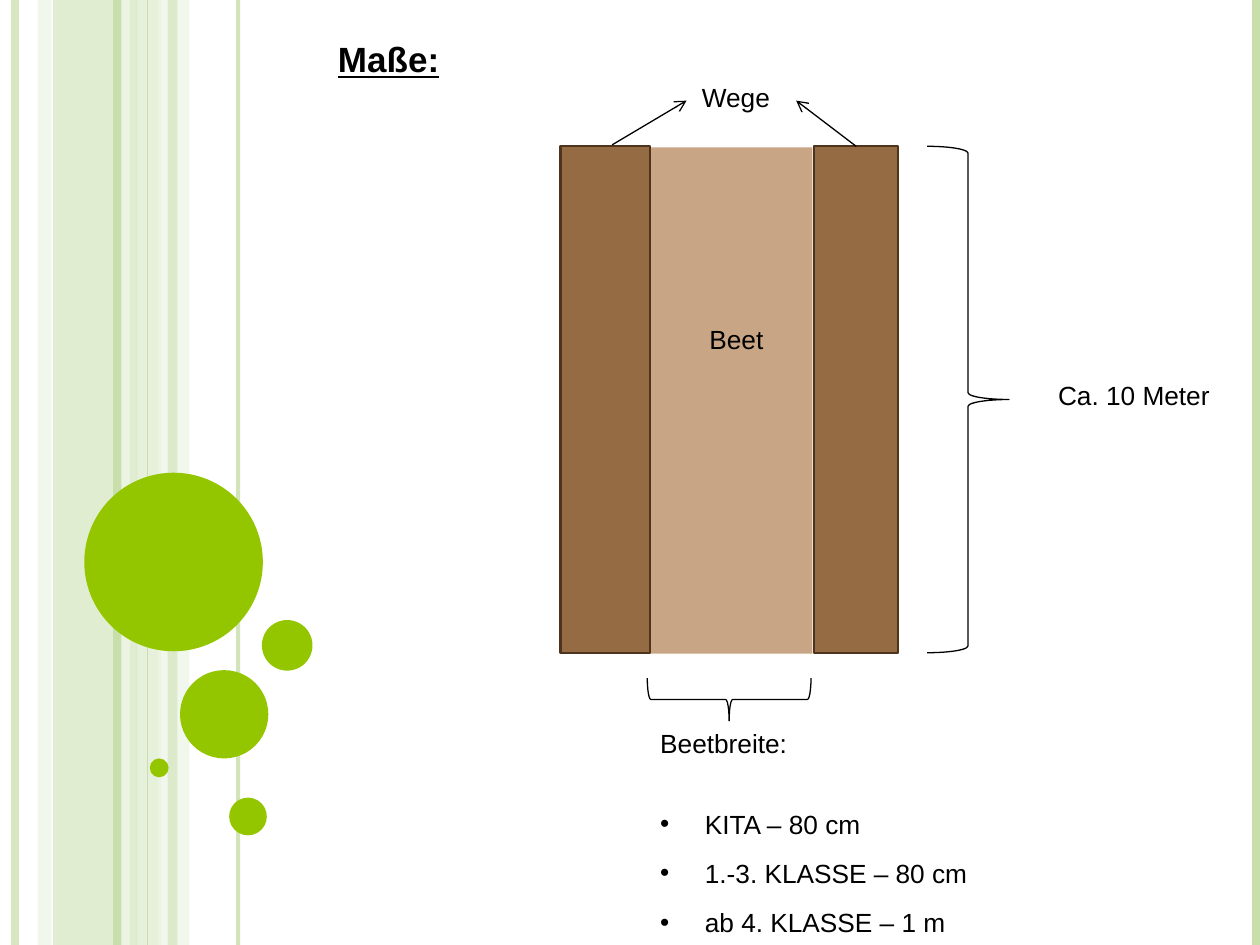
import dataclasses

import lxml.etree
import pptx
import pptx.dml.color
import pptx.enum.shapes
import pptx.enum.text
import pptx.oxml.ns
import pptx.util

Cm, Pt = pptx.util.Cm, pptx.util.Pt
Kind = pptx.enum.shapes.MSO_SHAPE
Align = pptx.enum.text.PP_ALIGN
qn = pptx.oxml.ns.qn


@dataclasses.dataclass
class Theme:
    font: str = "Arial"
    body: float = 15
    title: float = 20
    ink: str = "000000"
    band: str = "C8DFAB"
    mist: str = "DCEACC"
    pale: str = "EEF5E7"
    green: str = "94C600"
    bed: str = "C8A685"
    way: str = "956B43"
    edge: str = "4E341C"


def add(parent, tag, **attrs):
    return lxml.etree.SubElement(parent, qn(tag), **attrs)


class Sheet:
    def __init__(self, slide, theme):
        self.slide, self.theme = slide, theme

    def paint(self, fill, color, alpha=100):
        fill.solid()
        fill.fore_color.rgb = pptx.dml.color.RGBColor.from_string(color)
        if alpha < 100:
            node = fill.fore_color._xFill.find(qn("a:srgbClr"))
            add(node, "a:alpha", val=str(alpha * 1000))

    def shape(self, kind, x, y, w, h, fill=None, alpha=100, line=None, width=0.75):
        item = self.slide.shapes.add_shape(kind, Cm(x), Cm(y), Cm(w), Cm(h))
        item.shadow.inherit = False
        if fill:
            self.paint(item.fill, fill, alpha)
        else:
            item.fill.background()
        if line:
            self.paint(item.line.fill, line)
            item.line.width = Pt(width)
        else:
            item.line.fill.background()
        return item

    def line(self, x1, y1, x2, y2, color, width, alpha=100, arrow=False):
        item = self.slide.shapes.add_connector(
            pptx.enum.shapes.MSO_CONNECTOR.STRAIGHT, Cm(x1), Cm(y1), Cm(x2), Cm(y2))
        self.paint(item.line.fill, color, alpha)
        item.line.width = Pt(width)
        if arrow:
            add(item.line._get_or_add_ln(), "a:tailEnd", type="arrow")
        add(item._element.spPr, "a:effectLst")
        return item

    def text(self, x, y, w, h, words, align=Align.LEFT, size=None, strong=False):
        box = self.slide.shapes.add_textbox(Cm(x), Cm(y), Cm(w), Cm(h))
        frame = box.text_frame
        frame.word_wrap = True
        frame.auto_size = pptx.enum.text.MSO_AUTO_SIZE.SHAPE_TO_FIT_TEXT
        frame.text = words
        for para in frame.paragraphs:
            para.alignment = align
            for run in para.runs:
                font = run.font
                font.name = self.theme.font
                font.size = Pt(size or self.theme.body)
                font.color.rgb = pptx.dml.color.RGBColor.from_string(self.theme.ink)
                if strong:
                    font.bold = font.underline = True
        return frame

    def bullets(self, paras, indent, gap):
        for para in paras:
            para.line_spacing = 1.57
            props = para._p.get_or_add_pPr()
            props.set("marL", str(Cm(indent)))
            props.set("indent", str(-Cm(indent)))
            add(props, "a:buFont", typeface=self.theme.font)
            add(props, "a:buChar", char="•")
        paras[0].space_before = Pt(gap)


def main():
    deck = pptx.Presentation()
    deck.slide_width, deck.slide_height = Cm(25.4), Cm(19.05)
    theme = Theme()
    sheet = Sheet(deck.slides.add_slide(deck.slide_layouts[6]), theme)
    tall = 19.05

    # Background bands: left, width, colour, opacity
    for x, w, color, alpha in [(1.07, 1.7, theme.band, 54), (0.76, 0.28, theme.mist, 36),
                               (2.74, 0.51, theme.mist, 70), (3.18, 0.64, theme.pale, 71)]:
        sheet.shape(Kind.RECTANGLE, x, 0, w, tall, color, alpha)

    # Background stripes: place, colour, width, opacity
    for x, color, width, alpha in [
            (0.3, theme.band, 4.5, 73), (2.54, theme.pale, 4.5, 83),
            (2.36, theme.band, 4.5, 100), (4.8, theme.band, 2.25, 82),
            (2.97, theme.band, 0.75, 100), (25.32, theme.band, 4.5, 100)]:
        sheet.line(x, 0, x, tall, color, width, alpha)
    sheet.shape(Kind.RECTANGLE, 3.38, 0, 0.2, tall, theme.band, 51)

    # Green dots: left, top, diameter
    for x, y, size in [(1.7, 9.53, 3.6), (3.63, 13.51, 1.78), (3.02, 15.29, 0.38),
                       (4.62, 16.08, 0.76), (5.28, 12.5, 1.02)]:
        sheet.shape(Kind.OVAL, x, y, size, size, theme.green)

    # Bed, braces and the paths on both sides
    top, length = 2.95, 10.21
    sheet.shape(Kind.RECTANGLE, 13.08, 2.97, 3.3, length, theme.bed)
    sheet.shape(Kind.RIGHT_BRACE, 18.69, top, 1.65, length, line=theme.ink)
    brace = sheet.shape(Kind.LEFT_BRACE, 14.27, 12.45, 0.86, 3.3, line=theme.ink)
    brace.rotation = 270
    ways = [sheet.shape(Kind.RECTANGLE, x, top, w, length, theme.way,
                        line=theme.edge, width=1.25)
            for x, w in [(11.3, 1.8), (16.41, 1.7)]]

    # Measures
    sheet.text(21.08, 7.52, 8.59, 0.89, "Ca. 10 Meter")
    widths = sheet.text(13.06, 14.53, 16.21, 4.42, "\n".join([
        "Beetbreite:", "KITA – 80 cm", "1.-3. KLASSE – 80 cm", "ab 4. KLASSE – 1 m"]))
    sheet.bullets(widths.paragraphs[1:], 0.9, 18)

    # Labels and arrows
    sheet.text(13.64, 6.4, 2.41, 0.89, "Beet", Align.CENTER)
    sheet.line(12.34, 2.92, 13.84, 2.03, theme.ink, 0.75, arrow=True)
    right = sheet.line(17.26, top, 16.05, 2.03, theme.ink, 0.75, arrow=True)
    right.begin_connect(ways[1], 0)
    sheet.text(12.98, 1.52, 3.71, 0.89, "Wege", Align.CENTER)

    # Title
    sheet.text(4.29, 0.64, 7.09, 1.12, "Maße:", Align.CENTER, theme.title, True)

    deck.save("out.pptx")


if __name__ == "__main__":
    main()
